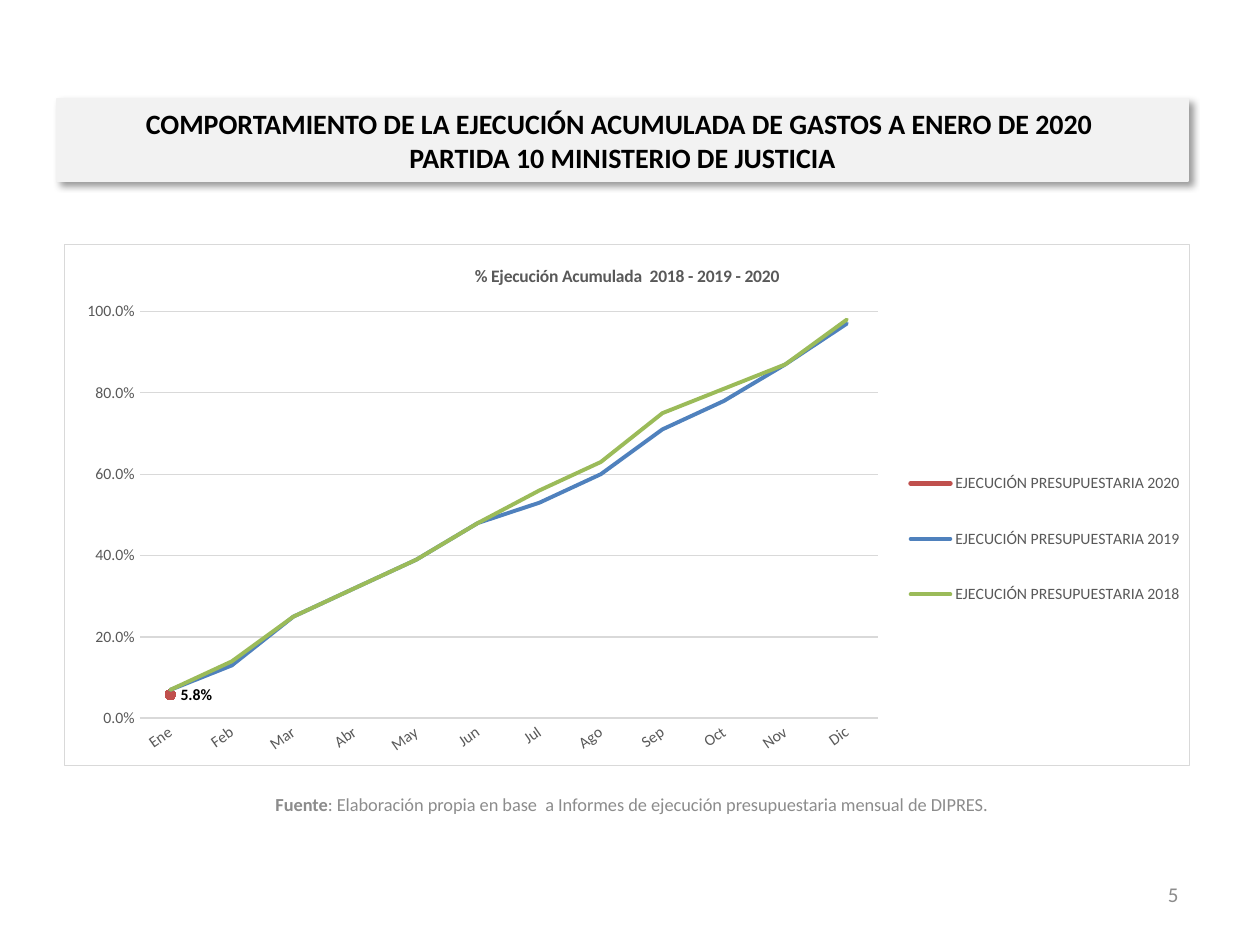
from lxml.etree import SubElement
from pptx import Presentation
from pptx.chart.data import CategoryChartData
from pptx.dml.color import RGBColor
from pptx.enum.chart import (XL_CHART_TYPE, XL_LABEL_POSITION, XL_LEGEND_POSITION,
                             XL_MARKER_STYLE, XL_TICK_MARK)
from pptx.enum.shapes import MSO_SHAPE
from pptx.enum.text import MSO_ANCHOR, PP_ALIGN
from pptx.oxml import parse_xml
from pptx.oxml.ns import nsdecls, qn
from pptx.util import Pt

EMU_PER_PX = 914400 / 126
FONT = "Calibri"
BLACK = RGBColor(0x00, 0x00, 0x00)
WHITE = RGBColor(0xFF, 0xFF, 0xFF)
BANNER_GRAY = RGBColor(0xF2, 0xF2, 0xF2)
GRID_GRAY = RGBColor(0xD9, 0xD9, 0xD9)
AXIS_GRAY = RGBColor(0x59, 0x59, 0x59)
NOTE_GRAY = RGBColor(0x8C, 0x8C, 0x8C)
RED = RGBColor(0xC0, 0x50, 0x4D)
BLUE = RGBColor(0x4F, 0x81, 0xBD)
GREEN = RGBColor(0x9B, 0xBB, 0x59)

MONTHS = ["Ene", "Feb", "Mar", "Abr", "May", "Jun",
          "Jul", "Ago", "Sep", "Oct", "Nov", "Dic"]
# year, colour, line width in points, accumulated share by month
EXECUTION = [
    (2020, RED, 2.75, [0.058]),
    (2019, BLUE, 2.25,
     [0.07, 0.13, 0.25, 0.32, 0.39, 0.48, 0.53, 0.6, 0.71, 0.78, 0.87, 0.97]),
    (2018, GREEN, 2.25,
     [0.07, 0.14, 0.25, 0.32, 0.39, 0.48, 0.56, 0.63, 0.75, 0.81, 0.87, 0.98]),
]


def px(length):
    return round(length * EMU_PER_PX)


def style_font(font, size, color, bold=False):
    font.name = FONT
    font.size = Pt(size)
    font.bold = bold
    font.color.rgb = color


def add_run(paragraph, text, size, color, bold=False):
    run = paragraph.add_run()
    run.text = text
    style_font(run.font, size, color, bold)


def add_banner(slide, left, top, width, height):
    banner = slide.shapes.add_shape(MSO_SHAPE.RECTANGLE,
                                    px(left), px(top), px(width), px(height))
    banner.fill.solid()
    banner.fill.fore_color.rgb = BANNER_GRAY
    banner.line.color.rgb = BANNER_GRAY
    banner.line.width = Pt(0.75)
    # Soft shadow to the lower right
    banner.shadow.inherit = False
    effects = banner.element.spPr.find(qn("a:effectLst"))
    shadow = SubElement(effects, qn("a:outerShdw"), blurRad=str(Pt(4)), dist=str(Pt(3)),
                        dir="2700000", algn="tl", rotWithShape="0")
    shadow_color = SubElement(shadow, qn("a:srgbClr"), val=str(BLACK))
    SubElement(shadow_color, qn("a:alpha"), val="40000")
    # Two-line heading
    frame = banner.text_frame
    frame.word_wrap = True
    frame.vertical_anchor = MSO_ANCHOR.MIDDLE
    heading = frame.paragraphs[0]
    heading.alignment = PP_ALIGN.CENTER
    add_run(heading, "COMPORTAMIENTO DE LA EJECUCIÓN ACUMULADA DE GASTOS A ENERO DE 2020 ",
            16, BLACK, True)
    heading.add_line_break()
    add_run(heading, "PARTIDA 10 MINISTERIO DE JUSTICIA", 16, BLACK, True)


def add_note(slide, left, top, width, height, alignment, runs, size):
    note = slide.shapes.add_textbox(px(left), px(top), px(width), px(height))
    frame = note.text_frame
    frame.word_wrap = True
    frame.vertical_anchor = MSO_ANCHOR.MIDDLE
    paragraph = frame.paragraphs[0]
    paragraph.alignment = alignment
    for text, bold in runs:
        add_run(paragraph, text, size, NOTE_GRAY, bold)


def set_layout(part, position, box, outer, inner_plot=False):
    """Place a chart part in box, as fractions of the outer width and height."""
    for automatic in part.findall(qn("c:layout")):
        part.remove(automatic)
    left, top, width, height = box
    target = '<c:layoutTarget val="inner"/>' if inner_plot else ""
    part.insert(position, parse_xml(
        f'<c:layout {nsdecls("c")}><c:manualLayout>{target}'
        '<c:xMode val="edge"/><c:yMode val="edge"/>'
        f'<c:x val="{left / outer[0]:.4f}"/><c:y val="{top / outer[1]:.4f}"/>'
        f'<c:w val="{width / outer[0]:.4f}"/><c:h val="{height / outer[1]:.4f}"/>'
        '</c:manualLayout></c:layout>'))


def style_axes(chart):
    months, share = chart.category_axis, chart.value_axis
    for axis in (months, share):
        axis.major_tick_mark = axis.minor_tick_mark = XL_TICK_MARK.NONE
        style_font(axis.tick_labels.font, 9, AXIS_GRAY)
    months.format.line.color.rgb = GRID_GRAY
    months.format.line.width = Pt(1)
    slant = months._element.find(qn("c:txPr")).find(qn("a:bodyPr"))
    slant.set("rot", "-2100000")
    slant.set("vert", "horz")
    share.minimum_scale, share.maximum_scale, share.major_unit = 0, 1, 0.2
    share.tick_labels.number_format = "0.0%"
    share.tick_labels.number_format_is_linked = False
    share.format.line.fill.background()
    share.major_gridlines.format.line.color.rgb = GRID_GRAY
    share.major_gridlines.format.line.width = Pt(0.75)


def style_series(chart):
    for series, (_, color, weight, _) in zip(chart.plots[0].series, EXECUTION):
        series.smooth = False
        series.format.line.color.rgb = color
        series.format.line.width = Pt(weight)
        series._element.spPr.find(qn("a:ln")).set("cap", "rnd")
        series.marker.style = XL_MARKER_STYLE.NONE
    # The current year has a single, labelled month
    january = chart.plots[0].series[0]
    point = january.points[0]
    point.marker.style = XL_MARKER_STYLE.CIRCLE
    point.marker.size = 6
    point.marker.format.fill.solid()
    point.marker.format.fill.fore_color.rgb = RED
    point.marker.format.line.color.rgb = RED
    labels = january.data_labels
    labels.show_value = True
    labels.number_format = "0.0%"
    labels.number_format_is_linked = False
    labels.position = XL_LABEL_POSITION.RIGHT
    style_font(labels.font, 9, BLACK, True)


def add_execution_chart(slide, left, top, width, height):
    data = CategoryChartData(number_format="0.0%")
    data.categories = MONTHS
    for year, _, _, shares in EXECUTION:
        missing = [None] * (len(MONTHS) - len(shares))
        data.add_series(f"EJECUCIÓN PRESUPUESTARIA {year}", shares + missing)
    chart = slide.shapes.add_chart(XL_CHART_TYPE.LINE, px(left), px(top),
                                   px(width), px(height), data).chart
    style_font(chart.font, 10, BLACK)
    chart.plots[0].vary_by_categories = False
    chart.has_title = True
    add_run(chart.chart_title.text_frame.paragraphs[0],
            "% Ejecución Acumulada  2018 - 2019 - 2020", 10, AXIS_GRAY, True)
    chart.chart_title.include_in_layout = False
    style_axes(chart)
    style_series(chart)
    # Legend to the right of the plot
    chart.has_legend = True
    legend = chart.legend
    legend.position = XL_LEGEND_POSITION.RIGHT
    legend.include_in_layout = False
    style_font(legend.font, 9, AXIS_GRAY)
    set_layout(legend._element, 1, (839, 193, 285, 204), (width, height))
    # Plot area, measured without its axis labels
    set_layout(chart._chartSpace.chart.plotArea, 0, (75, 67, 739, 408),
               (width, height), True)
    # Chart background and border
    chart._chartSpace.chart.addnext(parse_xml(
        f'<c:spPr {nsdecls("c", "a")}>'
        f'<a:solidFill><a:srgbClr val="{WHITE}"/></a:solidFill>'
        f'<a:ln w="{Pt(0.75)}"><a:solidFill><a:srgbClr val="{GRID_GRAY}"/></a:solidFill></a:ln>'
        '</c:spPr>'))


def main():
    deck = Presentation()
    deck.slide_width, deck.slide_height = px(1260), px(945)
    slide = deck.slides.add_slide(deck.slide_layouts[6])
    add_note(slide, 897, 869, 294, 50, PP_ALIGN.RIGHT, [("5", False)], 12)
    add_banner(slide, 57, 99, 1131, 82)
    add_note(slide, 53, 779, 1158, 50, PP_ALIGN.CENTER,
             [("Fuente", True),
              (": Elaboración propia en base  a Informes de ejecución presupuestaria "
               "mensual de DIPRES.", False)], 10.5)
    add_execution_chart(slide, 64, 244, 1126, 522)
    deck.save("out.pptx")


if __name__ == "__main__":
    main()
